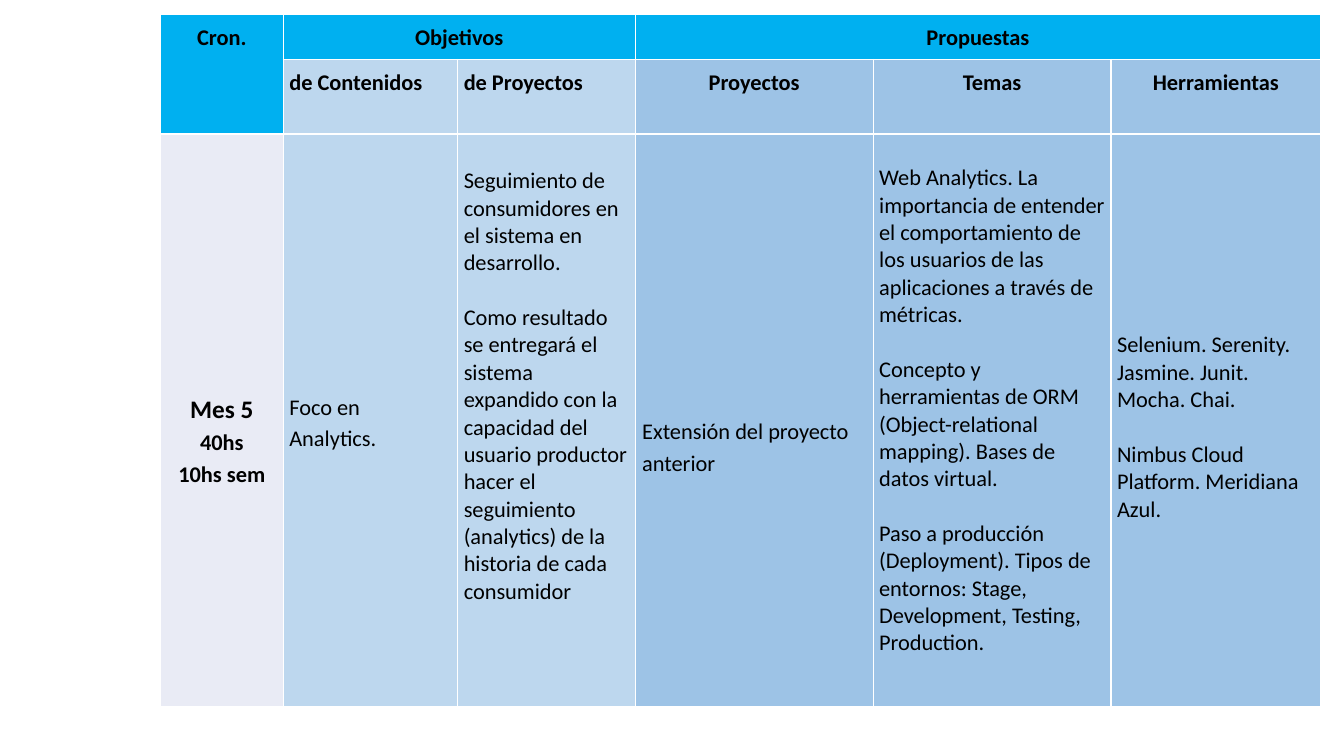
from pptx import Presentation, util as u
from pptx.dml.color import RGBColor
from pptx.enum import text
from pptx.oxml import parse_xml
from pptx.oxml.ns import nsdecls

COLORS = {"header": "00B0F0", "goals": "BDD7EE", "proposals": "9DC3E6",
          "month": "E9EBF5", "text": "000000", "border": "FFFFFF"}
COLUMNS = [1.22, 1.73, 1.76, 2.36, 2.36, 2.08]
ROWS = [0.45, 0.74, 5.68]
MERGES = [(0, 0, 1, 0), (0, 1, 0, 2), (0, 3, 0, 5)]
HEADINGS = [(0, 0, "Cron.", "header"), (0, 1, "Objetivos", "header"),
            (0, 3, "Propuestas", "header"),
            (1, 1, "de Contenidos", "goals"), (1, 2, "de Proyectos", "goals"),
            (1, 3, "Proyectos", "proposals"), (1, 4, "Temas", "proposals"),
            (1, 5, "Herramientas", "proposals")]
GOALS = ["Seguimiento de consumidores en el sistema en desarrollo.",
         "Como resultado se entregará el sistema expandido con la capacidad del "
         "usuario productor hacer el seguimiento (analytics) de la historia de "
         "cada consumidor"]
TOPICS = ["Web Analytics. La importancia de entender el comportamiento de los "
          "usuarios de las aplicaciones a través de métricas.",
          "Concepto y herramientas de ORM (Object-relational mapping). "
          "Bases de datos virtual.",
          "Paso a producción (Deployment). Tipos de entornos: Stage, "
          "Development, Testing, Production."]
TOOLS = ["Selenium. Serenity. Jasmine. Junit. Mocha. Chai.",
         "Nimbus Cloud Platform. Meridiana Azul."]


class SyllabusSlide:
    """Holds the table style and the slide being filled."""

    def __init__(self, deck, font="Calibri", size=16):
        self.slide = deck.slides.add_slide(deck.slide_layouts[6])
        self.font, self.size = font, size

    def add_grid(self, left, top):
        self.grid = self.slide.shapes.add_table(
            len(ROWS), len(COLUMNS), u.Inches(left), u.Inches(top),
            u.Inches(sum(COLUMNS)), u.Inches(sum(ROWS))).table
        for column, width in zip(self.grid.columns, COLUMNS):
            column.width = u.Inches(width)
        for row, height in zip(self.grid.rows, ROWS):
            row.height = u.Inches(height)
        for r1, c1, r2, c2 in MERGES:
            self.grid.cell(r1, c1).merge(self.grid.cell(r2, c2))
        for cell in self.grid.iter_cells():
            self.add_border(cell)

    def add_border(self, cell):
        properties = cell._tc.get_or_add_tcPr()
        for position, side in enumerate("LRTB"):
            properties.insert(position, parse_xml(
                f'<a:ln{side} {nsdecls("a")} w="12700"><a:solidFill>'
                f'<a:srgbClr val="{COLORS["border"]}"/></a:solidFill></a:ln{side}>'))

    def fill_cell(self, row, column, lines, color, top=0.06, inset=0.06,
                  bold=False, centered=False, spacing=1.15, gap=0, sizes=None):
        cell = self.grid.cell(row, column)
        cell.fill.solid()
        cell.fill.fore_color.rgb = RGBColor.from_string(COLORS[color])
        cell.margin_left = cell.margin_right = cell.margin_bottom = u.Inches(inset)
        cell.margin_top = u.Inches(top)
        cell.vertical_anchor = text.MSO_ANCHOR.TOP
        frame = cell.text_frame
        frame.text = "\n".join(lines)
        for index, paragraph in enumerate(frame.paragraphs):
            paragraph.alignment = text.PP_ALIGN.CENTER if centered else text.PP_ALIGN.LEFT
            paragraph.line_spacing = spacing
            if index:
                paragraph.space_before = u.Pt(gap)
            paragraph.font.name = self.font
            paragraph.font.size = u.Pt(sizes[index] if sizes else self.size)
            paragraph.font.bold = bold
            paragraph.font.color.rgb = RGBColor.from_string(COLORS["text"])


def main():
    deck = Presentation()
    deck.slide_width, deck.slide_height = u.Inches(13.33), u.Inches(7.5)
    syllabus = SyllabusSlide(deck)
    syllabus.add_grid(1.59, 0.14)
    for row, column, heading, color in HEADINGS:
        syllabus.fill_cell(row, column, [heading], color, bold=True,
                           centered=color != "goals")
    syllabus.fill_cell(2, 0, ["Mes 5", "40hs", "10hs sem"], "month", top=2.54,
                       bold=True, centered=True, sizes=[18, 16, 16])
    syllabus.fill_cell(2, 1, ["Foco en Analytics."], "goals", top=2.54)
    syllabus.fill_cell(2, 3, ["Extensión del proyecto anterior"], "proposals",
                       top=2.78, inset=0.07)
    for column, lines, color, top in [(2, GOALS, "goals", 0.33),
                                      (4, TOPICS, "proposals", 0.3),
                                      (5, TOOLS, "proposals", 1.96)]:
        syllabus.fill_cell(2, column, lines, color, top=top, spacing=1, gap=19.5)
    deck.save("out.pptx")


if __name__ == "__main__":
    main()
